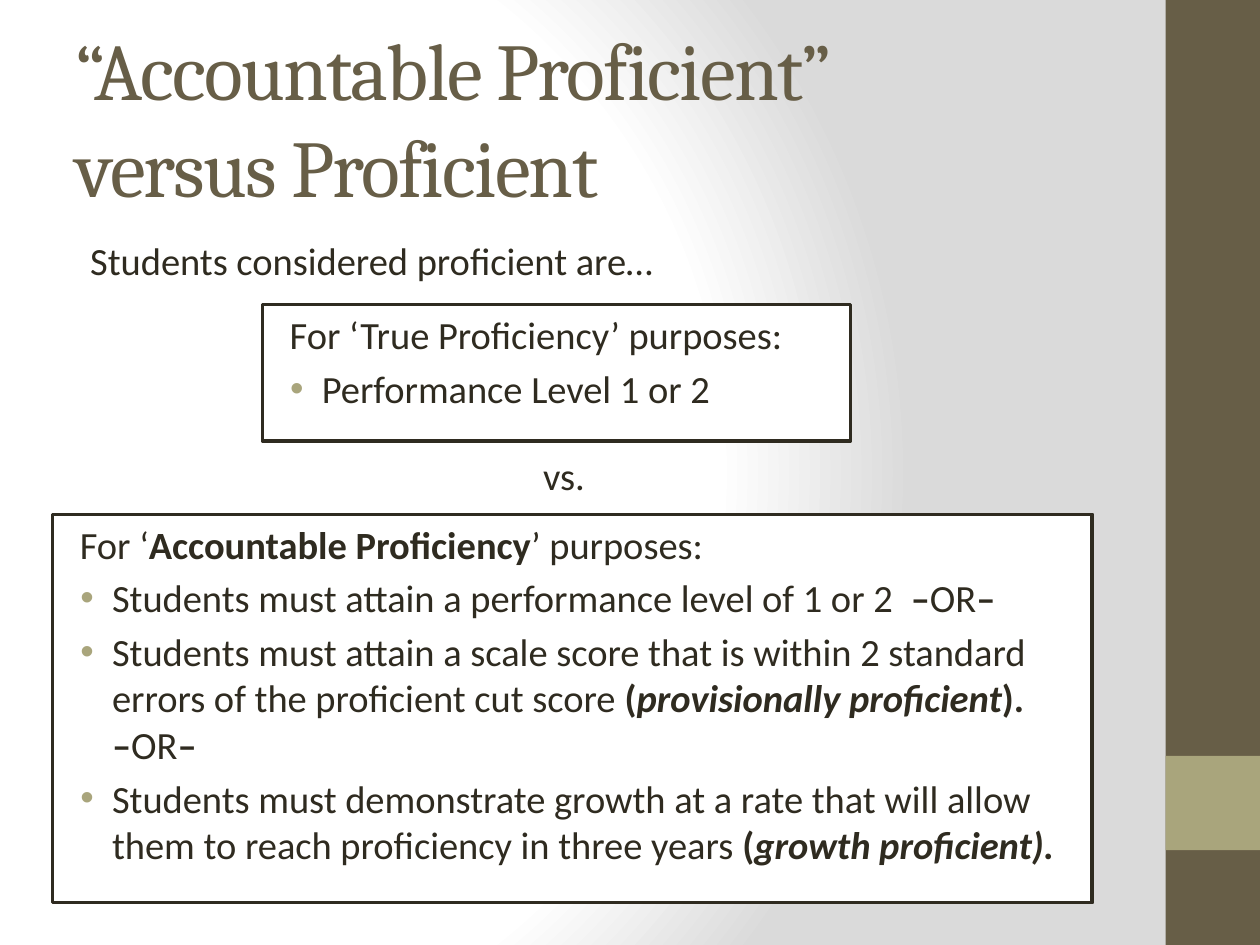
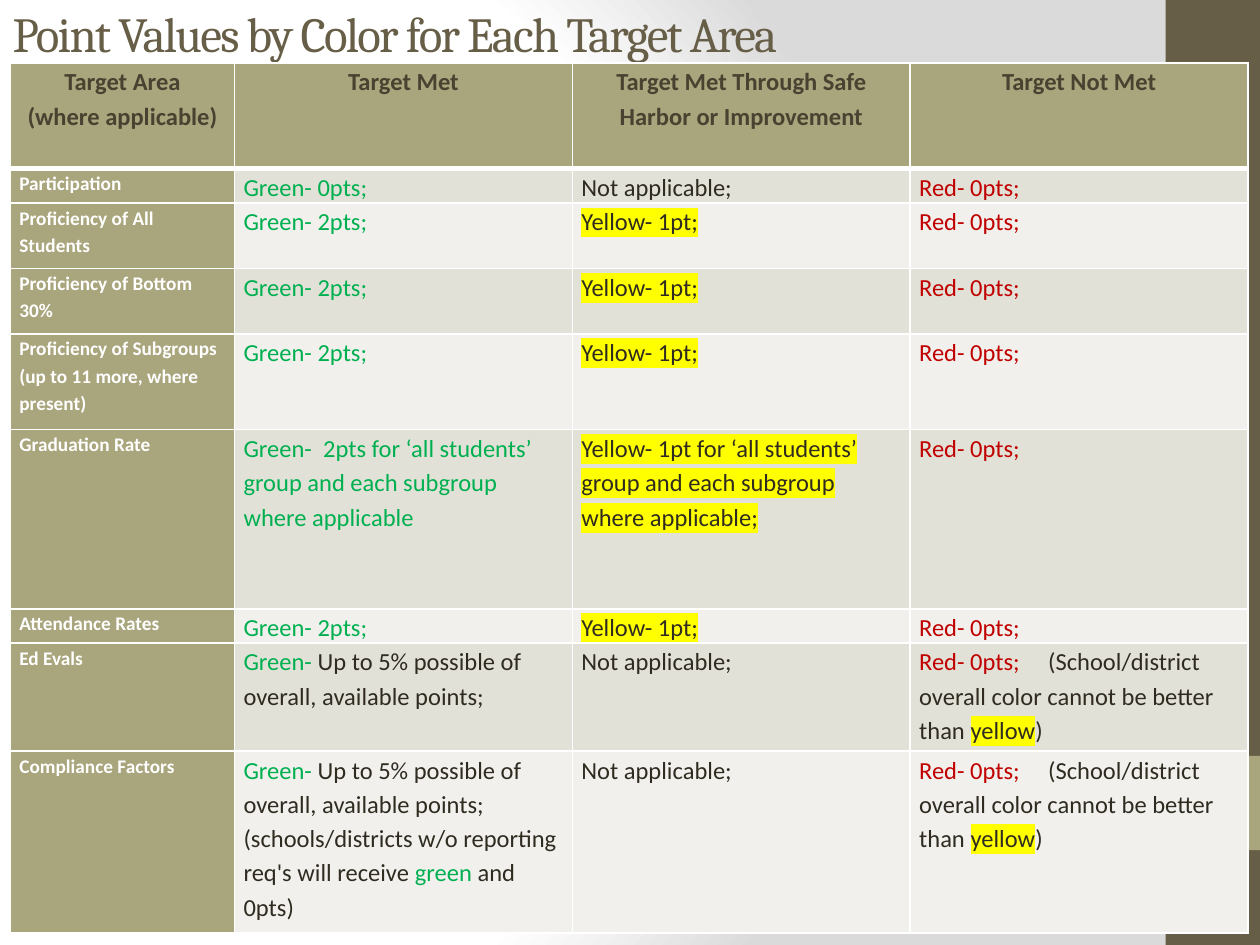
from copy import deepcopy
from dataclasses import dataclass

from lxml import etree
from pptx import Presentation
from pptx.dml.color import RGBColor
from pptx.enum.shapes import MSO_SHAPE
from pptx.enum.text import MSO_ANCHOR, MSO_AUTO_SIZE, PP_ALIGN
from pptx.oxml.ns import qn
from pptx.util import Cm, Pt

RECT = MSO_SHAPE.RECTANGLE
TOP, MIDDLE = MSO_ANCHOR.TOP, MSO_ANCHOR.MIDDLE
LEFT, CENTER = PP_ALIGN.LEFT, PP_ALIGN.CENTER
NO_FIT = MSO_AUTO_SIZE.NONE
TITLE_ONLY = 5


@dataclass(frozen=True)
class Theme:
    body_font: str = "Calibri"
    title_font: str = "Cambria"
    ink: str = "2F2B20"
    brown: str = "675E47"
    olive: str = "A9A57C"
    head_ink: str = "494231"
    white: str = "FFFFFF"
    shade: str = "DADADA"
    stripes: tuple = ("E2E1D7", "F1F0EC")
    green: str = "00B050"
    red: str = "C00000"
    yellow: str = "FFFF00"
    title_size: int = 46
    table_title_size: int = 28
    body_size: int = 22
    cell_size: int = 14
    label_size: int = 11


@dataclass(frozen=True)
class Box:
    x: float
    y: float
    w: float
    h: float

    def place(self):
        return Cm(self.x), Cm(self.y), Cm(self.w), Cm(self.h)

    def inner(self, dx, dy, w, h):
        return Box(self.x + dx, self.y + dy, w, h)


T = Theme()
PAGE = Box(0, 0, 25.4, 19.05)
STYLES = {
    "plain": {},
    "bold": {"bold": True},
    "bold italic": {"bold": True, "italic": True},
    "green": {"color": T.green},
    "red": {"color": T.red},
    "yellow": {"highlight": T.yellow},
    "head": {"color": T.head_ink, "bold": True},
    "label": {"color": T.white, "bold": True},
}

TRUE_PROFICIENCY = [
    [("For ‘True Proficiency’ purposes:", "plain")],
    [("Performance Level 1 or 2", "plain")],
]
OR = [("–", "bold"), ("OR", "plain"), ("–", "bold")]
ACCOUNTABLE_PROFICIENCY = [
    [("For ‘", "plain"), ("Accountable Proficiency", "bold"), ("’ purposes:", "plain")],
    [("Students must attain a performance level of 1 or 2  ", "plain"), *OR],
    [("Students must attain a scale score that is within 2 standard errors of "
      "the proficient cut score ", "plain"), ("(", "bold"),
     ("provisionally proficient", "bold italic"), ("). \n", "bold"), *OR],
    [("Students must demonstrate growth at a rate that will allow them to reach "
      "proficiency in three years ", "plain"), ("(", "bold"),
     ("growth proficient).", "bold italic")],
]

HEADERS = ["Target Area\n(where applicable)", "Target Met",
           "Target Met Through Safe Harbor or Improvement", "Target Not Met"]
COLUMN_WIDTHS = [4.52, 6.81, 6.81, 6.81]
HEADER_HEIGHT = 2.13
TWO_POINTS = [("Green- 2pts;", "green")]
ONE_POINT = [("Yellow- 1pt;", "yellow")]
NO_POINTS = [("Red- 0pts;", "red")]
NOT_APPLICABLE = [("Not applicable;", "plain")]
CAPPED = [("Red- 0pts;\t", "red"),
          ("(School/district overall color cannot be better than ", "plain"),
          ("yellow", "yellow"), (")", "plain")]
TARGET_ROWS = [
    (0.69, "Participation", [("Green- 0pts;", "green")], NOT_APPLICABLE, NO_POINTS),
    (1.32, "Proficiency of All Students", TWO_POINTS, ONE_POINT, NO_POINTS),
    (1.32, "Proficiency of Bottom 30%", TWO_POINTS, ONE_POINT, NO_POINTS),
    (1.93, "Proficiency of Subgroups\n(up to 11 more, where present)",
     TWO_POINTS, ONE_POINT, NO_POINTS),
    (3.61, "Graduation Rate",
     [("Green-  2pts for ‘all students’ group and each subgroup where applicable", "green")],
     [("Yellow- 1pt for ‘all students’ group and each subgroup where applicable;", "yellow")],
     NO_POINTS),
    (0.69, "Attendance Rates", TWO_POINTS, ONE_POINT, NO_POINTS),
    (2.18, "Ed Evals",
     [("Green-", "green"), (" Up to 5% possible of overall, available points;", "plain")],
     NOT_APPLICABLE, CAPPED),
    (3.66, "Compliance Factors",
     [("Green- ", "green"),
      ("Up to 5% possible of overall, available points;\n"
       "(schools/districts w/o reporting req's will receive ", "plain"),
      ("green", "green"), (" and 0pts)", "plain")],
     NOT_APPLICABLE, CAPPED),
]


def rgb(value):
    return RGBColor.from_string(value)


def sub(parent, tag, **attrs):
    return etree.SubElement(parent, qn(tag), {k: str(v) for k, v in attrs.items()})


def format_run(r, size, font=T.body_font, color=T.ink, bold=False, italic=False,
               highlight=None):
    f = r.font
    f.size, f.name, f.bold, f.italic = Pt(size), font, bold, italic
    f.color.rgb = rgb(color)
    if highlight:
        mark = etree.Element(qn("a:highlight"))
        sub(mark, "a:srgbClr", val=highlight)
        r._r.rPr.find(qn("a:solidFill")).addnext(mark)


def write(p, pieces, size):
    for text, style in pieces:
        for i, part in enumerate(text.split("\n")):
            if i:
                p.add_line_break()
                p._p[-1].append(deepcopy(r._r.rPr))
            if part:
                r = p.add_run()
                r.text = part
                format_run(r, size, **STYLES[style])


def indent(p, left, hanging=0.0, bullet=False):
    pPr = p._p.get_or_add_pPr()
    pPr.set("marL", str(Cm(left)))
    pPr.set("indent", str(Cm(-hanging)))
    if bullet:
        sub(sub(pPr, "a:buClr"), "a:srgbClr", val=T.olive)
        sub(pPr, "a:buFont", typeface="Arial")
        sub(pPr, "a:buChar", char="•")
    p.space_before = Pt(4.4)


def set_background(master):
    fill = master.background.fill
    fill.gradient()
    grad = master.element.cSld.bg.bgPr.find(qn("a:gradFill"))
    for child in list(grad):
        grad.remove(child)
    stops = sub(grad, "a:gsLst")
    for pos, color in ((0, T.white), (75, T.white), (100, T.shade)):
        sub(sub(stops, "a:gs", pos=pos * 1000), "a:srgbClr", val=color)
    circle = sub(grad, "a:path", path="circle")
    sub(circle, "a:fillToRect", l=20000, t=50000, r=100000, b=50000)


def add_rect(s, box, fill, line=None):
    sp = s.shapes.add_shape(RECT, *box.place())
    sp.shadow.inherit = False
    sp.fill.solid()
    sp.fill.fore_color.rgb = rgb(fill)
    if line:
        sp.line.color.rgb = rgb(line)
        sp.line.width = Pt(2)
    else:
        sp.line.fill.background()
    return sp


def add_side_band(s, box):
    add_rect(s, box, T.brown)
    add_rect(s, box.inner(0, 15.24, box.w, box.w), T.olive)


def add_title(s, box, text, size):
    sp = s.shapes.title
    sp.left, sp.top, sp.width, sp.height = box.place()
    tf = sp.text_frame
    tf.text = text
    tf.auto_size = NO_FIT
    tf.word_wrap = True
    tf.vertical_anchor = MIDDLE
    p = tf.paragraphs[0]
    p.alignment = LEFT
    for r in p.runs:
        format_run(r, size, T.title_font, T.brown)
        r._r.rPr.set("spc", "-100")


def new_slide(prs, title_box, title, size):
    s = prs.slides.add_slide(prs.slide_layouts[TITLE_ONLY])
    add_side_band(s, PAGE.inner(23.5, 0, 1.9, PAGE.h))
    add_title(s, title_box, title, size)
    return s


def add_intro(s, box):
    tf = s.shapes.add_textbox(*box.place()).text_frame
    tf.word_wrap = True
    intro, versus = tf.paragraphs[0], tf.add_paragraph()
    for p, text in ((intro, "Students considered proficient are…"), (versus, "vs.")):
        write(p, [(text, "plain")], T.body_size)
        indent(p, 0.3)
    versus.alignment = CENTER
    versus.space_before = Pt(96.5)


def add_definition(s, box, paragraphs):
    tf = add_rect(s, box, T.white, T.ink).text_frame
    tf.word_wrap = True
    tf.vertical_anchor = TOP
    for i, pieces in enumerate(paragraphs):
        p = tf.add_paragraph() if i else tf.paragraphs[0]
        p.alignment = LEFT
        write(p, pieces, T.body_size)
        if i:
            indent(p, 0.95, 0.64, bullet=True)
        else:
            indent(p, 0.3)


def set_borders(cell, top=1, bottom=1):
    tcPr = cell._tc.get_or_add_tcPr()
    for side, width in (("L", 1), ("R", 1), ("T", top), ("B", bottom)):
        ln = sub(tcPr, f"a:ln{side}", w=Pt(width))
        sub(sub(ln, "a:solidFill"), "a:srgbClr", val=T.white)


def fill_cell(cell, pieces, size, fill, align=LEFT, **borders):
    set_borders(cell, **borders)
    cell.fill.solid()
    cell.fill.fore_color.rgb = rgb(fill)
    cell.margin_left = cell.margin_right = Cm(0.18)
    cell.margin_top = cell.margin_bottom = 0
    p = cell.text_frame.paragraphs[0]
    p.alignment = align
    p.line_spacing = 1.15
    p.space_after = Pt(10)
    write(p, pieces, size)
    if pieces is CAPPED:
        tabs = sub(p._p.get_or_add_pPr(), "a:tabLst")
        sub(tabs, "a:tab", pos=Cm(2.6), algn="l")


def add_points_table(s, box):
    shape = s.shapes.add_table(len(TARGET_ROWS) + 1, len(HEADERS), *box.place())
    table = shape.table
    for column, width in zip(table.columns, COLUMN_WIDTHS):
        column.width = Cm(width)
    table.rows[0].height = Cm(HEADER_HEIGHT)
    for c, text in enumerate(HEADERS):
        fill_cell(table.cell(0, c), [(text, "head")], T.cell_size, T.olive, CENTER, bottom=3)
    for i, (height, label, *results) in enumerate(TARGET_ROWS):
        table.rows[i + 1].height = Cm(height)
        top = 1 if i else 3
        fill_cell(table.cell(i + 1, 0), [(label, "label")], T.label_size, T.olive, top=top)
        for c, pieces in enumerate(results, 1):
            fill_cell(table.cell(i + 1, c), pieces, T.cell_size, T.stripes[i % 2], top=top)


def build_proficiency_slide(prs, box):
    s = new_slide(prs, box.inner(1.27, 0.76, 21.16, 3.18),
                  "“Accountable Proficient” \vversus Proficient", T.title_size)
    add_intro(s, box.inner(1.27, 4.65, 19.9, 7.62))
    add_definition(s, box.inner(5.29, 6.14, 11.86, 2.75), TRUE_PROFICIENCY)
    add_definition(s, box.inner(1.06, 10.37, 20.96, 7.83), ACCOUNTABLE_PROFICIENCY)


def build_points_slide(prs, box):
    s = new_slide(prs, box.inner(0, 0.05, box.w, 1.22),
                  "Point Values by Color for Each Target Area", T.table_title_size)
    add_points_table(s, box.inner(0.21, 1.27, 24.95, 17.53))


def main():
    prs = Presentation()
    prs.slide_width, prs.slide_height = Cm(PAGE.w), Cm(PAGE.h)
    set_background(prs.slide_master)
    build_proficiency_slide(prs, PAGE)
    build_points_slide(prs, PAGE)
    prs.save("out.pptx")


if __name__ == "__main__":
    main()
